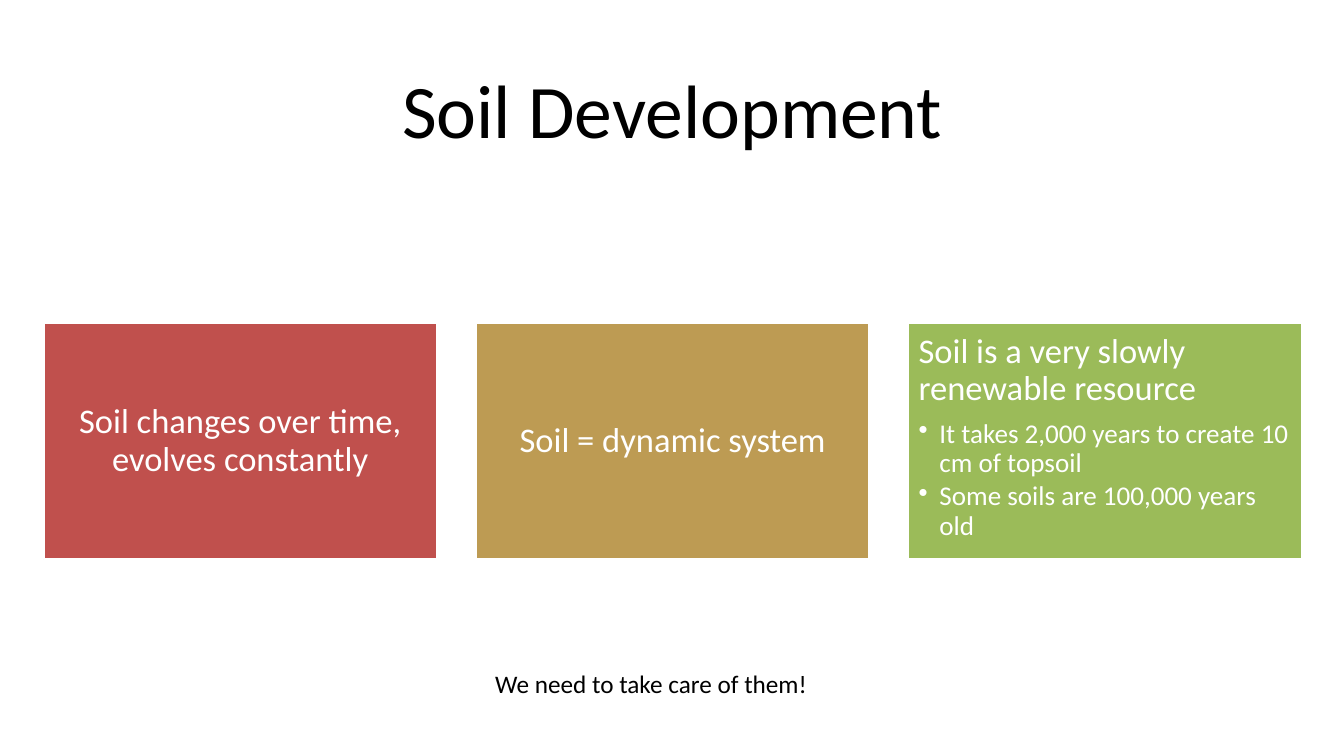
"""Build the Soil Development slide with three statement cards."""
from dataclasses import dataclass

import pptx
import pptx.dml.color
import pptx.enum.shapes
import pptx.enum.text
import pptx.oxml
import pptx.oxml.ns
import pptx.shapes.autoshape
import pptx.slide
import pptx.text.text
import pptx.util
from pptx.util import Inches

RGBColor = pptx.dml.color.RGBColor
Align = pptx.enum.text.PP_ALIGN
Anchor = pptx.enum.text.MSO_ANCHOR

BLACK = RGBColor(0x00, 0x00, 0x00)
WHITE = RGBColor(0xFF, 0xFF, 0xFF)
RED = RGBColor(0xC0, 0x50, 0x4D)
OCHRE = RGBColor(0xBD, 0x9B, 0x53)
GREEN = RGBColor(0x9B, 0xBB, 0x59)

FONT = "Calibri"
MARGIN = 0.65
CARD_TOP = 4.81
CARD_WIDTH = 5.85
CARD_HEIGHT = 3.51
CARD_PITCH = 6.435


@dataclass(frozen=True)
class Card:
    statement: str
    fill: RGBColor
    details: tuple[str, ...] = ()


CARDS = (
    Card("Soil changes over time, evolves constantly", RED),
    Card("Soil = dynamic system", OCHRE),
    Card(
        "Soil is a very slowly renewable resource",
        GREEN,
        (
            "It takes 2,000 years to create 10 cm of topsoil",
            "Some soils are 100,000 years old",
        ),
    ),
)


def write(
    paragraph: pptx.text.text._Paragraph,
    text: str,
    *,
    size: float,
    color: RGBColor,
    align: Align = Align.LEFT,
    line_spacing: float = 1.0,
    space_after: float = 0,
    bullet: bool = False,
) -> None:
    """Fill a paragraph with formatted text."""
    paragraph.text = text
    paragraph.alignment = align
    paragraph.line_spacing = line_spacing
    paragraph.space_before = pptx.util.Pt(0)
    paragraph.space_after = pptx.util.Pt(space_after)
    if bullet:
        paragraph.level = 1
        properties = paragraph._p.get_or_add_pPr()
        properties.set("marL", str(Inches(0.31)))
        properties.set("indent", str(-Inches(0.31)))
        mark = pptx.oxml.parse_xml(f'<a:buChar {pptx.oxml.ns.nsdecls("a")} char="•"/>')
        properties.append(mark)
    font = paragraph.font
    font.name = FONT
    font.size = pptx.util.Pt(size)
    font.color.rgb = color


def set_insets(frame: pptx.text.text.TextFrame, side: float, end: float) -> None:
    """Set equal insets at the sides and at the top and bottom."""
    frame.margin_left = frame.margin_right = Inches(side)
    frame.margin_top = frame.margin_bottom = Inches(end)


def draw_card(slide: pptx.slide.Slide, card: Card, left: float) -> None:
    """Draw one coloured card with its statement and details."""
    panel = slide.shapes.add_shape(
        pptx.enum.shapes.MSO_SHAPE.RECTANGLE,
        Inches(left), Inches(CARD_TOP), Inches(CARD_WIDTH), Inches(CARD_HEIGHT),
    )
    panel.shadow.inherit = False
    panel.fill.solid()
    panel.fill.fore_color.rgb = card.fill
    panel.line.color.rgb = WHITE
    panel.line.width = pptx.util.Pt(2)

    frame = panel.text_frame
    frame.word_wrap = True
    frame.vertical_anchor = Anchor.TOP if card.details else Anchor.MIDDLE
    set_insets(frame, 0.15, 0.15)
    write(
        frame.paragraphs[0], card.statement, size=37, color=WHITE,
        align=Align.LEFT if card.details else Align.CENTER,
        line_spacing=0.9, space_after=13 if card.details else 0,
    )
    for detail in card.details:
        write(
            frame.add_paragraph(), detail, size=29, color=WHITE,
            line_spacing=0.9, space_after=4.4, bullet=True,
        )


def main() -> None:
    """Build and save the slide."""
    presentation = pptx.Presentation()
    presentation.slide_width = Inches(20)
    presentation.slide_height = Inches(11.25)
    slide = presentation.slides.add_slide(presentation.slide_layouts[5])

    title = slide.shapes.title
    title.left, title.top = Inches(MARGIN), Inches(0.53)
    title.width, title.height = Inches(18.71), Inches(2.17)
    title.text_frame.vertical_anchor = Anchor.MIDDLE
    set_insets(title.text_frame, 0.15, 0.07)
    write(
        title.text_frame.paragraphs[0], "Soil Development",
        size=81, color=BLACK, align=Align.CENTER,
    )

    for column, card in enumerate(CARDS):
        draw_card(slide, card, MARGIN + column * CARD_PITCH)

    appeal = slide.shapes.add_textbox(
        Inches(7.27), Inches(9.9), Inches(4.88), Inches(1.01)
    )
    appeal.text_frame.word_wrap = False
    write(
        appeal.text_frame.paragraphs[0], "We need to take care of them!",
        size=27, color=BLACK,
    )

    presentation.save("out.pptx")


if __name__ == "__main__":
    main()
